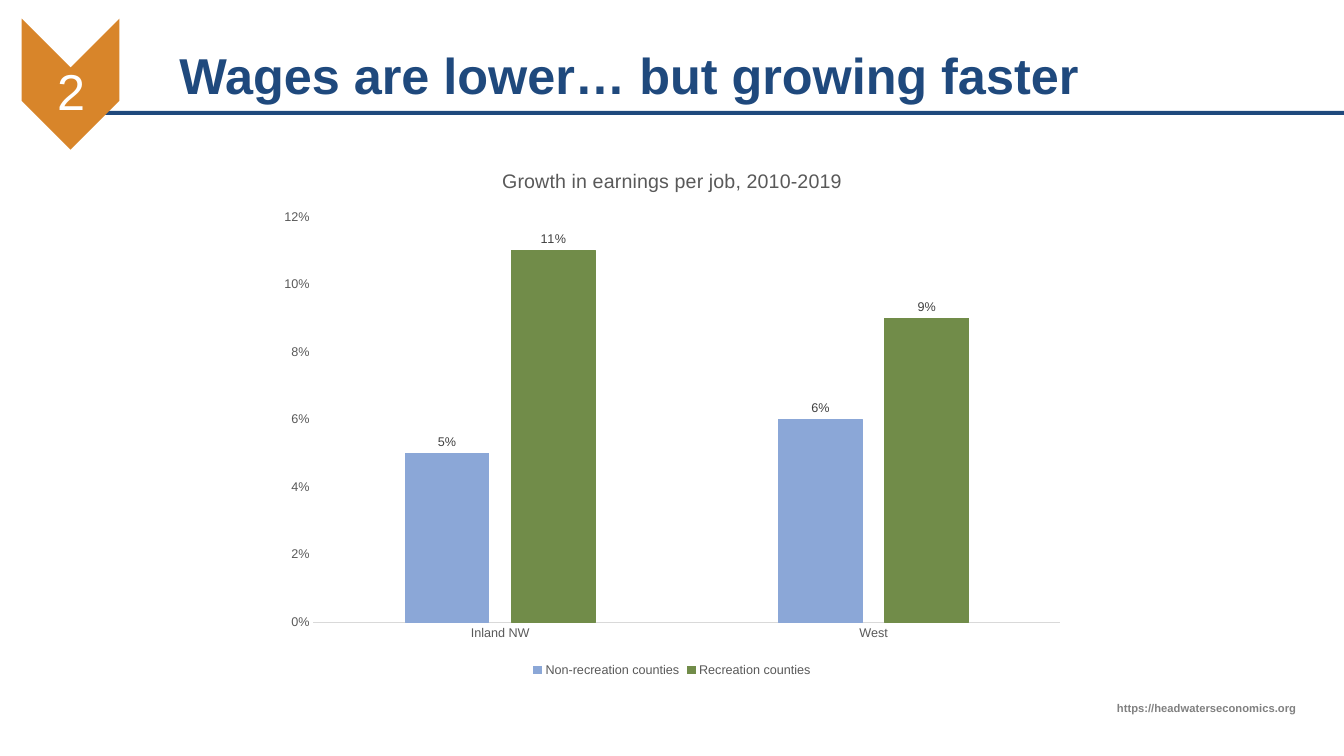
from dataclasses import dataclass

from pptx import Presentation
from pptx.chart.data import CategoryChartData
from pptx.dml.color import RGBColor
from pptx.enum.chart import XL_CHART_TYPE as ChartType
from pptx.enum.chart import XL_LABEL_POSITION as LabelPosition
from pptx.enum.chart import XL_LEGEND_POSITION as LegendPosition
from pptx.enum.chart import XL_TICK_MARK as TickMark
from pptx.enum.shapes import MSO_SHAPE as Preset
from pptx.enum.text import MSO_ANCHOR as Anchor
from pptx.enum.text import MSO_AUTO_SIZE as AutoSize
from pptx.enum.text import PP_ALIGN as Align
from pptx.slide import Slide
from pptx.text.text import Font, TextFrame
from pptx.util import Pt


@dataclass(frozen=True)
class Theme:
    font: str = "Arial"
    navy: str = "1F497D"
    orange: str = "D8852A"
    white: str = "FFFFFF"
    source_gray: str = "808080"
    chart_gray: str = "595959"
    label_gray: str = "404040"
    axis_gray: str = "D9D9D9"
    blue: str = "8BA7D7"
    green: str = "718C49"
    heading: float = 36
    chart_title: float = 14
    chart_text: float = 9
    source: float = 8


@dataclass(frozen=True)
class Box:
    left: float
    top: float
    width: float
    height: float

    def lengths(self) -> tuple[Pt, Pt, Pt, Pt]:
        return Pt(self.left), Pt(self.top), Pt(self.width), Pt(self.height)


@dataclass(frozen=True)
class Block:
    box: Box
    preset: Preset
    color: str
    rotation: float = 0


@dataclass(frozen=True)
class Caption:
    text: str
    box: Box
    size: float
    color: str
    align: Align
    bold: bool = False
    inset: float = 7.2
    anchor: Anchor = Anchor.TOP
    spacing: float = 1.0


@dataclass(frozen=True)
class CountyGroup:
    name: str
    growth: tuple[float, ...]
    color: str


THEME = Theme()
SLIDE_WIDTH, SLIDE_HEIGHT = 960, 540
PERCENT = "0%"

HEADER_RULE = Block(Box(72, 79.2, 888, 2.88), Preset.RECTANGLE, THEME.navy)
SECTION_MARKER = Block(Box(3.6, 25.2, 93.6, 69.84), Preset.CHEVRON, THEME.orange, 90)
SOURCE = Caption("https://headwaterseconomics.org", Box(627.84, 497.5, 305.28, 17.28),
                 THEME.source, THEME.source_gray, Align.RIGHT, bold=True)
HEADING = Caption("Wages are lower… but growing faster", Box(120.96, 28.8, 773.28, 50.4),
                  THEME.heading, THEME.navy, Align.LEFT, bold=True,
                  anchor=Anchor.BOTTOM, spacing=0.9)
SECTION_NUMBER = Caption("2", Box(15.84, 53.28, 69.84, 28.08), THEME.heading, THEME.white,
                         Align.CENTER, inset=2.16, anchor=Anchor.MIDDLE, spacing=0.9)

CHART_BOX = Box(191.52, 106.56, 577.44, 380.16)
CHART_TITLE = "Growth in earnings per job, 2010-2019"
REGIONS = ("Inland NW", "West")
COUNTY_GROUPS = (
    CountyGroup("Non-recreation counties", (0.05, 0.06), THEME.blue),
    CountyGroup("Recreation counties", (0.11, 0.09), THEME.green),
)


def rgb(color: str) -> RGBColor:
    return RGBColor.from_string(color)


def style_font(font: Font, size: float, color: str, bold: bool = False) -> None:
    font.name = THEME.font
    font.size = Pt(size)
    font.bold = bold
    font.color.rgb = rgb(color)


def draw_block(slide: Slide, block: Block) -> None:
    shape = slide.shapes.add_shape(block.preset, *block.box.lengths())
    shape.rotation = block.rotation
    shape.shadow.inherit = False
    shape.fill.solid()
    shape.fill.fore_color.rgb = rgb(block.color)
    shape.line.fill.background()


def fill_caption(frame: TextFrame, caption: Caption) -> None:
    frame.text = caption.text
    frame.word_wrap = True
    frame.auto_size = AutoSize.NONE
    frame.vertical_anchor = caption.anchor
    frame.margin_left = frame.margin_right = Pt(caption.inset)
    frame.margin_top = frame.margin_bottom = Pt(min(caption.inset, 3.6))
    paragraph = frame.paragraphs[0]
    paragraph.alignment = caption.align
    paragraph.line_spacing = caption.spacing
    style_font(paragraph.runs[0].font, caption.size, caption.color, caption.bold)


def draw_caption(slide: Slide, caption: Caption) -> None:
    fill_caption(slide.shapes.add_textbox(*caption.box.lengths()).text_frame, caption)


def place_heading(slide: Slide, caption: Caption) -> None:
    heading = slide.shapes.title
    heading.left, heading.top, heading.width, heading.height = caption.box.lengths()
    fill_caption(heading.text_frame, caption)


def draw_growth_chart(slide: Slide) -> None:
    growth = CategoryChartData(number_format=PERCENT)
    growth.categories = REGIONS
    for group in COUNTY_GROUPS:
        growth.add_series(group.name, group.growth)
    chart = slide.shapes.add_chart(
        ChartType.COLUMN_CLUSTERED, *CHART_BOX.lengths(), growth).chart
    style_font(chart.font, THEME.chart_text, THEME.chart_gray)

    # Chart title and legend
    chart.has_title = True
    title_frame = chart.chart_title.text_frame
    title_frame.text = CHART_TITLE
    style_font(title_frame.paragraphs[0].runs[0].font, THEME.chart_title, THEME.chart_gray)
    chart.has_legend = True
    chart.legend.position = LegendPosition.BOTTOM
    chart.legend.include_in_layout = False
    style_font(chart.legend.font, THEME.chart_text, THEME.chart_gray)

    # Axes
    for axis in (chart.category_axis, chart.value_axis):
        axis.has_major_gridlines = False
        axis.major_tick_mark = axis.minor_tick_mark = TickMark.NONE
        style_font(axis.tick_labels.font, THEME.chart_text, THEME.chart_gray)
    chart.category_axis.format.line.color.rgb = rgb(THEME.axis_gray)
    chart.category_axis.format.line.width = Pt(0.75)
    percent_axis = chart.value_axis
    percent_axis.format.line.fill.background()
    percent_axis.minimum_scale, percent_axis.maximum_scale = 0, 0.12
    percent_axis.major_unit = 0.02
    percent_axis.tick_labels.number_format = PERCENT
    percent_axis.tick_labels.number_format_is_linked = False

    # Columns and their labels
    plot = chart.plots[0]
    plot.vary_by_categories = False
    plot.gap_width, plot.overlap = 219, -27
    for columns, group in zip(plot.series, COUNTY_GROUPS):
        columns.format.fill.solid()
        columns.format.fill.fore_color.rgb = rgb(group.color)
        columns.format.line.color.rgb = rgb(group.color)
        columns.format.line.width = Pt(0.75)
        labels = columns.data_labels
        labels.show_value = True
        labels.position = LabelPosition.OUTSIDE_END
        labels.number_format = PERCENT
        labels.number_format_is_linked = False
        style_font(labels.font, THEME.chart_text, THEME.label_gray)


def main() -> None:
    deck = Presentation()
    deck.slide_width, deck.slide_height = Pt(SLIDE_WIDTH), Pt(SLIDE_HEIGHT)
    slide = deck.slides.add_slide(deck.slide_layouts[5])

    # Header and source
    place_heading(slide, HEADING)
    draw_block(slide, HEADER_RULE)
    draw_caption(slide, SOURCE)

    # Section marker
    draw_block(slide, SECTION_MARKER)
    draw_caption(slide, SECTION_NUMBER)

    draw_growth_chart(slide)
    deck.save("out.pptx")


if __name__ == "__main__":
    main()
